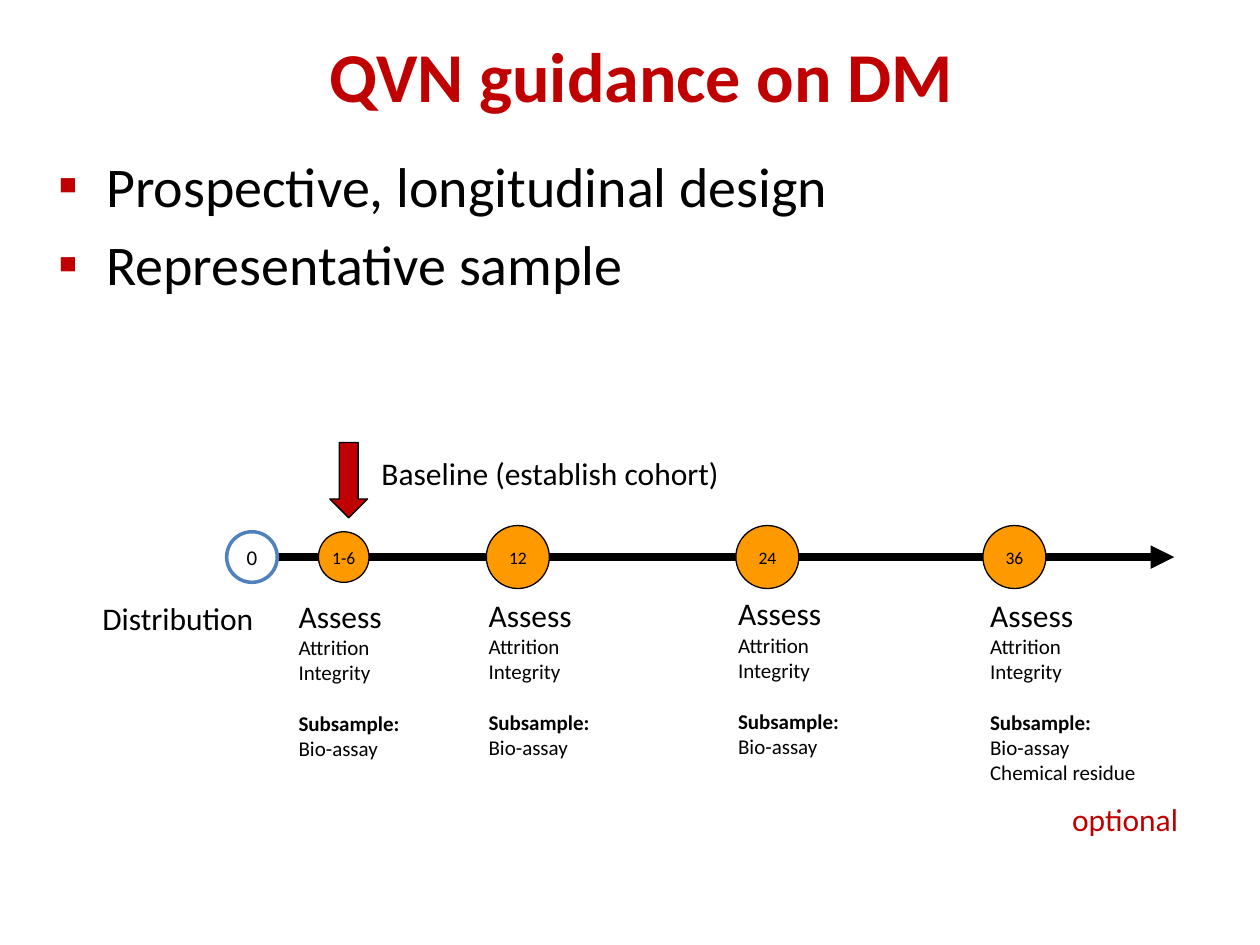
from lxml import etree
from pptx import Presentation
from pptx.dml.color import RGBColor
from pptx.enum.shapes import MSO_CONNECTOR, MSO_SHAPE
from pptx.enum.text import MSO_ANCHOR, PP_ALIGN
from pptx.oxml.ns import qn
from pptx.util import Cm, Pt

RED = RGBColor(0xC0, 0x00, 0x00)
ORANGE = RGBColor(0xFF, 0x99, 0x00)
BLUE = RGBColor(0x4F, 0x81, 0xBD)
BLACK = RGBColor(0x00, 0x00, 0x00)
WHITE = RGBColor(0xFF, 0xFF, 0xFF)

deck = Presentation()
deck.slide_width, deck.slide_height = Cm(25.4), Cm(19.05)
slide = deck.slides.add_slide(deck.slide_layouts[6])
shapes = slide.shapes


def add_text(left, top, width, height, lines, size, color=BLACK, align=PP_ALIGN.LEFT):
    box = shapes.add_textbox(Cm(left), Cm(top), Cm(width), Cm(height))
    frame = box.text_frame
    frame.word_wrap = True
    frame.text = "\n".join(lines)
    for para in frame.paragraphs:
        para.alignment = align
        font = para.runs[0].font
        font.name, font.size, font.color.rgb = "Calibri", Pt(size), color
    return frame.paragraphs


def add_mark(kind, left, top, width, height, fill, line=BLACK, weight=0.75):
    mark = shapes.add_shape(kind, Cm(left), Cm(top), Cm(width), Cm(height))
    mark.shadow.inherit = False
    mark.fill.solid()
    mark.fill.fore_color.rgb = fill
    mark.line.color.rgb = line
    mark.line.width = Pt(weight)
    return mark


# Title
title = add_text(1.5, 0.53, 22.86, 1.96, ["QVN guidance on DM"], 40, RED, PP_ALIGN.CENTER)
title[0].runs[0].font.bold = True

# Bullets
points = ["Prospective, longitudinal design", "Representative sample"]
for para in add_text(0.94, 2.92, 24, 4.19, points, 32):
    para.space_before = Pt(6.4)
    props = para._p.get_or_add_pPr()
    props.set("marL", str(Cm(0.95)))
    props.set("indent", str(-Cm(0.95)))
    tint = etree.SubElement(props, qn("a:buClr"))
    etree.SubElement(tint, qn("a:srgbClr"), val=str(RED))
    etree.SubElement(props, qn("a:buFont"), typeface="Calibri")
    etree.SubElement(props, qn("a:buChar"), char="▪")

# Time axis
mid = 11.23
axis = shapes.add_connector(MSO_CONNECTOR.STRAIGHT, Cm(4.9), Cm(mid), Cm(23.67), Cm(mid))
axis.line.color.rgb = BLACK
axis.line.width = Pt(4.5)
etree.SubElement(axis.line._get_or_add_ln(), qn("a:tailEnd"), type="triangle")
etree.SubElement(axis._element.spPr, qn("a:effectLst"))

# Months: label, centre, diameter, text size, fill, line, line width
months = [
    ("0", 5.08, 1.02, 12, WHITE, BLUE, 2),
    ("1-6", 6.93, 1.02, 10, ORANGE, BLACK, 0.75),
    ("12", 10.44, 1.27, 10, ORANGE, BLACK, 0.75),
    ("24", 15.47, 1.27, 10, ORANGE, BLACK, 0.75),
    ("36", 20.45, 1.27, 10, ORANGE, BLACK, 0.75),
]
for label, x, size, points, fill, line, weight in months:
    dot = add_mark(MSO_SHAPE.OVAL, x - size / 2, mid - size / 2, size, size, fill, line, weight)
    frame = dot.text_frame
    frame.text = label
    frame.word_wrap = False
    frame.vertical_anchor = MSO_ANCHOR.MIDDLE
    frame.margin_left = frame.margin_right = 0
    para = frame.paragraphs[0]
    para.alignment = PP_ALIGN.CENTER
    font = para.runs[0].font
    font.name, font.size, font.color.rgb = "Calibri", Pt(points), BLACK

# Tasks under the months: left, top, width, extra lines
tasks = [
    (5.77, 11.91, 2.84, []),
    (9.6, 11.89, 2.84, []),
    (14.63, 11.86, 2.84, []),
    (19.71, 11.89, 3.61, ["Chemical residue"]),
]
steps = ["Assess", "Attrition", "Integrity", "Subsample:", "Bio-assay"]
for left, top, width, extra in tasks:
    paras = add_text(left, top, width, 3.58, steps + extra, 12)
    paras[0].runs[0].font.size = Pt(18)
    paras[3].runs[0].font.bold = True
    paras[3].space_before = Pt(14.5)

# Baseline arrow and labels
add_mark(MSO_SHAPE.DOWN_ARROW, 6.65, 8.92, 0.76, 1.52, RED)
add_text(7.44, 9.02, 8.18, 1.02, ["Baseline (establish cohort)"], 18)
add_text(1.5, 11.96, 3.86, 1.02, ["Distribution"], 18, align=PP_ALIGN.RIGHT)
add_text(18.49, 16, 5.51, 1.02, ["optional"], 18, RED, PP_ALIGN.RIGHT)

deck.save("out.pptx")
